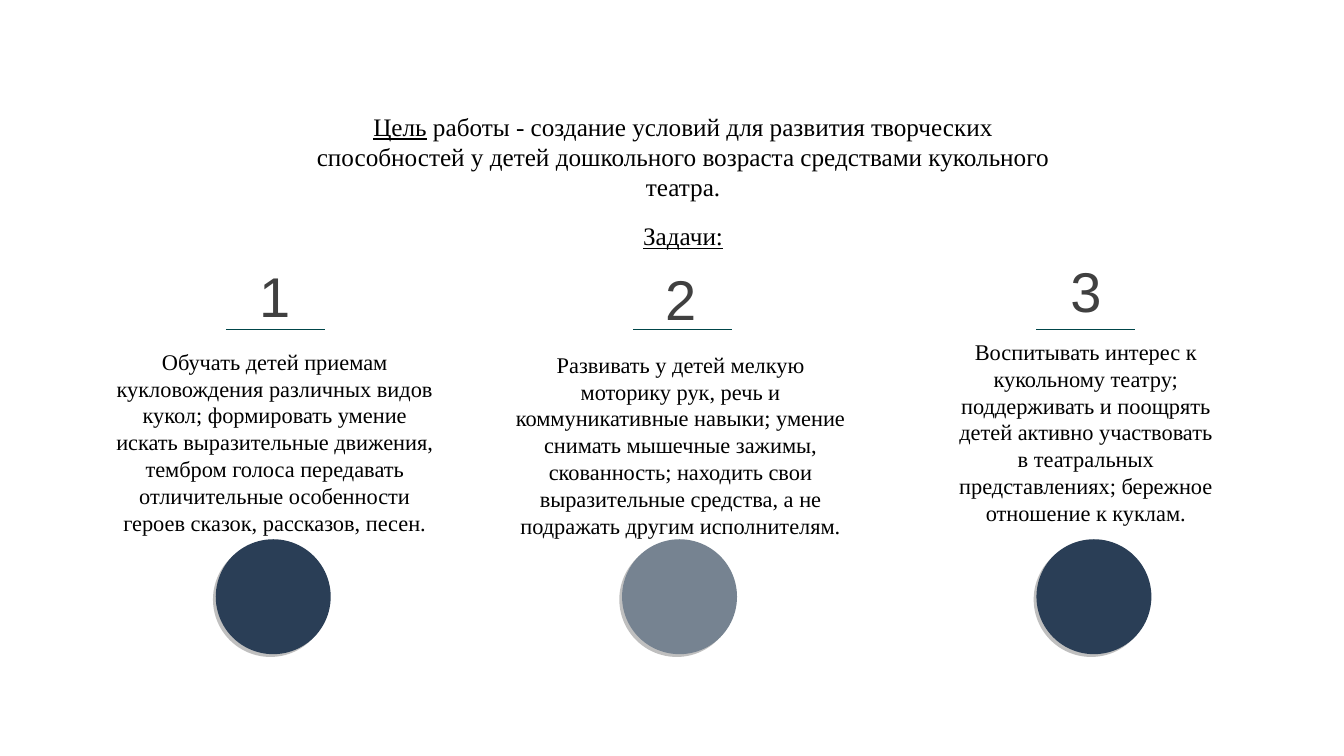
from pptx import Presentation
from pptx.dml.color import RGBColor as RGB
from pptx.enum.shapes import MSO_CONNECTOR as CONN, MSO_SHAPE as SHAPE
from pptx.enum.text import PP_ALIGN as ALIGN
from pptx.oxml import parse_xml
from pptx.oxml.ns import nsdecls, qn
from pptx.util import Inches, Pt
from lxml import etree

NAVY = RGB(0x2A, 0x3E, 0x56)
SLATE = RGB(0x76, 0x83, 0x91)
TEAL = RGB(0x00, 0x45, 0x49)
GRAY = RGB(0x40, 0x40, 0x40)
BLACK = RGB(0, 0, 0)

BODY = dict(name="Times New Roman", size=Pt(16), color=BLACK)
LEAD = BODY | dict(size=Pt(18))
LEAD_U = LEAD | dict(underline=True)
DIGIT = dict(name="Arial", size=Pt(40), color=GRAY)

SHADOW = (
    f'<a:effectLst {nsdecls("a")}>'
    '<a:outerShdw blurRad="0" dist="35560" dir="8100000" algn="ctr" rotWithShape="0">'
    '<a:srgbClr val="808080"><a:alpha val="50000"/></a:srgbClr>'
    '</a:outerShdw></a:effectLst>'
)


class Deck:
    """Holds the slide; lengths are columns and rows of a 1-inch grid."""

    def __init__(self, cols=13.33, rows=7.5, cell=1):
        self.cell = cell
        self.prs = Presentation()
        self.prs.slide_width = self.grid(cols)
        self.prs.slide_height = self.grid(rows)
        self.s = self.prs.slides.add_slide(self.prs.slide_layouts[6])

    def grid(self, n):
        return Inches(n * self.cell)

    def circle(self, x, y, d, color):
        sp = self.s.shapes.add_shape(SHAPE.OVAL, *map(self.grid, (x, y, d, d)))
        sp.fill.solid()
        sp.fill.fore_color.rgb = color
        sp.line.fill.background()
        sp._element.spPr.append(parse_xml(SHADOW))

    def rule(self, x, y, w):
        ends = map(self.grid, (x, y, x + w, y))
        ln = self.s.shapes.add_connector(CONN.STRAIGHT, *ends)
        ln.line.color.rgb = TEAL
        ln.line.width = Pt(0.5)
        etree.SubElement(ln._element.spPr, qn("a:effectLst"))

    def text(self, box, paragraphs, align=ALIGN.CENTER, inset=True, gap=0):
        """Each paragraph is a list of (text, style) runs."""
        tf = self.s.shapes.add_textbox(*map(self.grid, box)).text_frame
        tf.word_wrap = True
        if not inset:
            for side in ("left", "top", "right", "bottom"):
                setattr(tf, f"margin_{side}", 0)
        for i, runs in enumerate(paragraphs):
            p = tf.add_paragraph() if i else tf.paragraphs[0]
            p.alignment = align
            if i:
                p.space_before = Pt(gap)
            for words, style in runs:
                r = p.add_run()
                r.text = words
                for key, value in style.items():
                    if key == "color":
                        r.font.color.rgb = value
                    else:
                        setattr(r.font, key, value)


# Text box, gap under the digit, rule left, circle left, circle colour, text
TASKS = [
    ((1.14, 2.59, 3.17, 2.76), 14, 2.24, 2.14, NAVY,
     "Обучать детей приемам кукловождения различных видов кукол; "
     "формировать умение искать выразительные движения, тембром голоса "
     "передавать отличительные особенности героев сказок, рассказов, песен."),
    ((5.06, 2.62, 3.38, 2.76), 14, 6.28, 6.17, SLATE,
     "Развивать у детей мелкую моторику рук, речь и коммуникативные навыки; "
     "умение снимать мышечные зажимы, скованность; находить свои "
     "выразительные средства, а не подражать другим исполнителям."),
    ((9.47, 2.54, 2.6, 2.71), 10.5, 10.28, 10.28, NAVY,
     "Воспитывать интерес к кукольному театру; поддерживать и поощрять детей "
     "активно участвовать в театральных представлениях; бережное отношение "
     "к куклам."),
]


def main():
    deck = Deck()

    # Three numbered tasks, each with a rule and a circle
    for n, (box, gap, rule_x, circle_x, color, words) in enumerate(TASKS, 1):
        deck.circle(circle_x, 5.35, 1.14, color)
        deck.text(box, [[(str(n), DIGIT)], [(words, BODY)]], inset=False, gap=gap)
        deck.rule(rule_x, 3.27, 0.98)

    # Goal and the heading of the tasks
    deck.text((3, 1.05, 7.55, 1.01), [[
        ("Цель", LEAD_U),
        (" работы - создание условий для развития творческих способностей "
         "у детей дошкольного возраста средствами кукольного театра.", LEAD),
    ]])
    deck.text((6.28, 2.14, 1.41, 0.4), [[("Задачи:", LEAD_U)]], align=ALIGN.LEFT)

    deck.prs.save("out.pptx")


if __name__ == "__main__":
    main()
